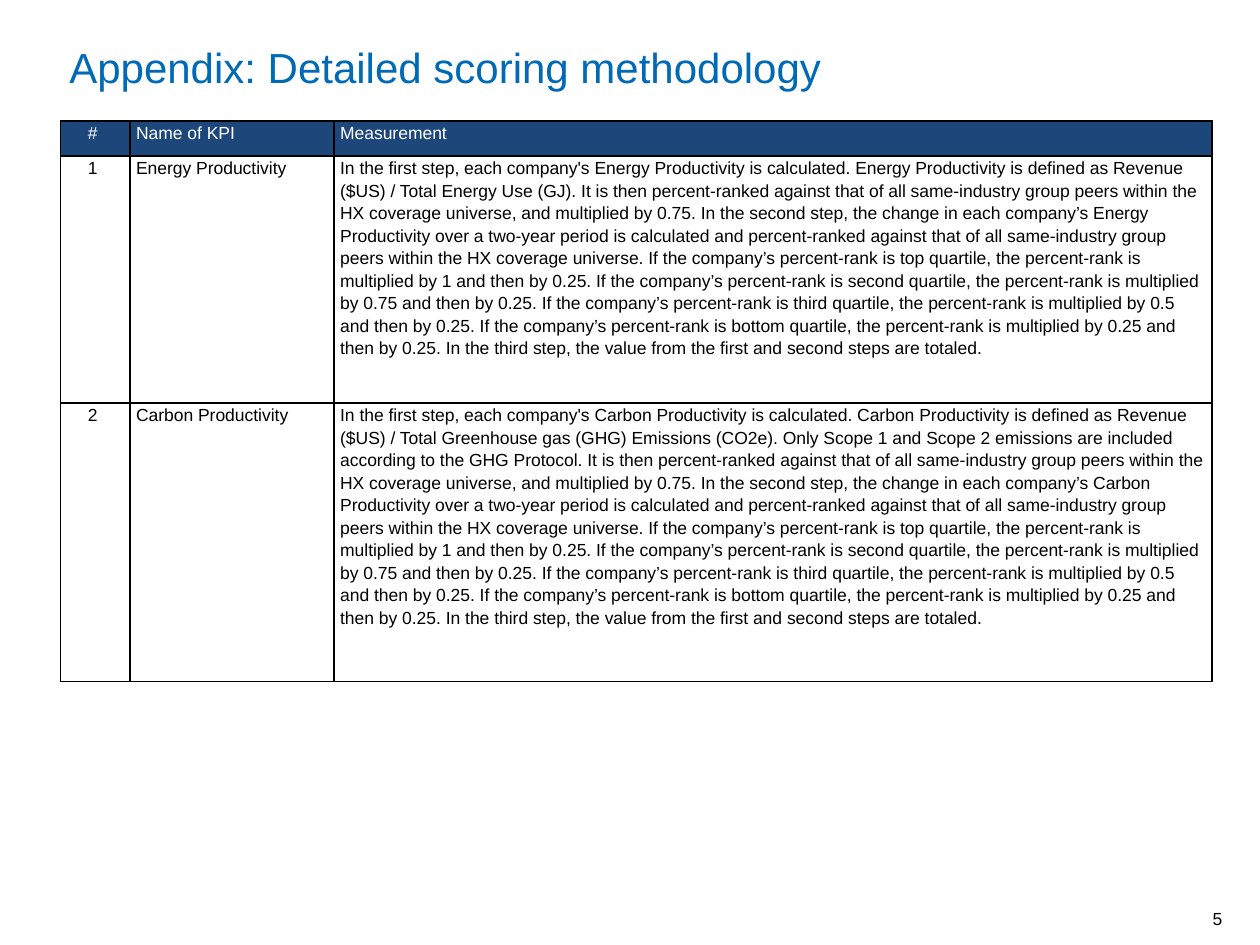
from lxml import etree
from pptx import Presentation
from pptx.dml.color import RGBColor
from pptx.enum import text
from pptx.oxml import ns
from pptx.util import Inches, Pt

COLORS = {"title": "006AB6", "header": "1D477A", "white": "FFFFFF", "black": "000000"}
FONT = "Arial"

MEASUREMENT = (
    "In the first step, each company's {name} is calculated. {name} is defined as {ratio}. "
    "It is then percent‐ranked against that of all same‐industry group peers within the "
    "HX coverage universe, and multiplied by 0.75. In the second step, the change in each "
    "company’s {name} over a two-year period is calculated and percent‐ranked against that "
    "of all same‐industry group peers within the HX coverage universe. {quartiles} "
    "In the third step, the value from the first and second steps are totaled."
)
QUARTILES = " ".join(
    f"If the company’s percent‐rank is {quartile} quartile, the percent‐rank is "
    f"multiplied by {factor} and then by 0.25."
    for quartile, factor in [("top", "1"), ("second", "0.75"), ("third", "0.5"), ("bottom", "0.25")]
)
KPIS = [
    ("Energy Productivity", "Revenue ($US) / Total Energy Use (GJ)"),
    ("Carbon Productivity", "Revenue ($US) / Total Greenhouse gas (GHG) Emissions (CO2e). "
     "Only Scope 1 and Scope 2 emissions are included according to the GHG Protocol"),
]


def style_text(paragraph, size, color, alignment=text.PP_ALIGN.LEFT):
    paragraph.alignment = alignment
    for run in paragraph.runs:
        run.font.name = FONT
        run.font.size = Pt(size)
        run.font.color.rgb = RGBColor.from_string(COLORS[color])


def add_borders(cell):
    properties = cell._tc.get_or_add_tcPr()
    for position, side in enumerate(("lnL", "lnR", "lnT", "lnB")):
        line = etree.Element(ns.qn(f"a:{side}"), w=str(Pt(1)))
        fill = etree.SubElement(line, ns.qn("a:solidFill"))
        etree.SubElement(fill, ns.qn("a:srgbClr"), val=COLORS["black"])
        properties.insert(position, line)


presentation = Presentation()
presentation.slide_width = Inches(10)
presentation.slide_height = Inches(7.5)
slide = presentation.slides.add_slide(presentation.slide_layouts[5])

# Title
title = slide.shapes.title
title.left, title.top = Inches(0.45), Inches(0.25)
title.width, title.height = Inches(8.2), Inches(0.81)
title.text_frame.text = "Appendix: Detailed scoring methodology"
title.text_frame.vertical_anchor = text.MSO_ANCHOR.TOP
title.text_frame.margin_top = Inches(0.08)
style_text(title.text_frame.paragraphs[0], 24, "title")

# KPI table
rows = [("# ", "Name of KPI", "Measurement")]
for number, (name, ratio) in enumerate(KPIS, start=1):
    measurement = MEASUREMENT.format(name=name, ratio=ratio, quartiles=QUARTILES)
    rows.append((f"{number} ", name, measurement))

table = slide.shapes.add_table(
    len(rows), 3, Inches(0.48), Inches(0.96), Inches(9.14), Inches(4.45)
).table
for column, width in zip(table.columns, (0.55, 1.62, 6.97)):
    column.width = Inches(width)
for row, height in zip(table.rows, (0.28, 1.96, 2.21)):
    row.height = Inches(height)

for row_index, row in enumerate(rows):
    for column_index, content in enumerate(row):
        cell = table.cell(row_index, column_index)
        cell.margin_left = cell.margin_right = Inches(0.05)
        cell.margin_top = cell.margin_bottom = 0
        cell.text_frame.text = content
        paragraph = cell.text_frame.paragraphs[0]
        paragraph.line_spacing = 1.15
        is_header = row_index == 0
        alignment = text.PP_ALIGN.CENTER if column_index == 0 else text.PP_ALIGN.LEFT
        style_text(paragraph, 10, "white" if is_header else "black", alignment)
        if is_header:
            cell.fill.solid()
            cell.fill.fore_color.rgb = RGBColor.from_string(COLORS["header"])
        else:
            cell.fill.background()
        add_borders(cell)

# Page number
page_number = slide.shapes.add_textbox(Inches(8.93), Inches(7.17), Inches(0.77), Inches(0.2))
frame = page_number.text_frame
frame.word_wrap = True
frame.margin_left = frame.margin_top = frame.margin_right = frame.margin_bottom = 0
frame.vertical_anchor = text.MSO_ANCHOR.BOTTOM
frame.text = "5"
style_text(frame.paragraphs[0], 10, "black", text.PP_ALIGN.RIGHT)

presentation.save("out.pptx")
